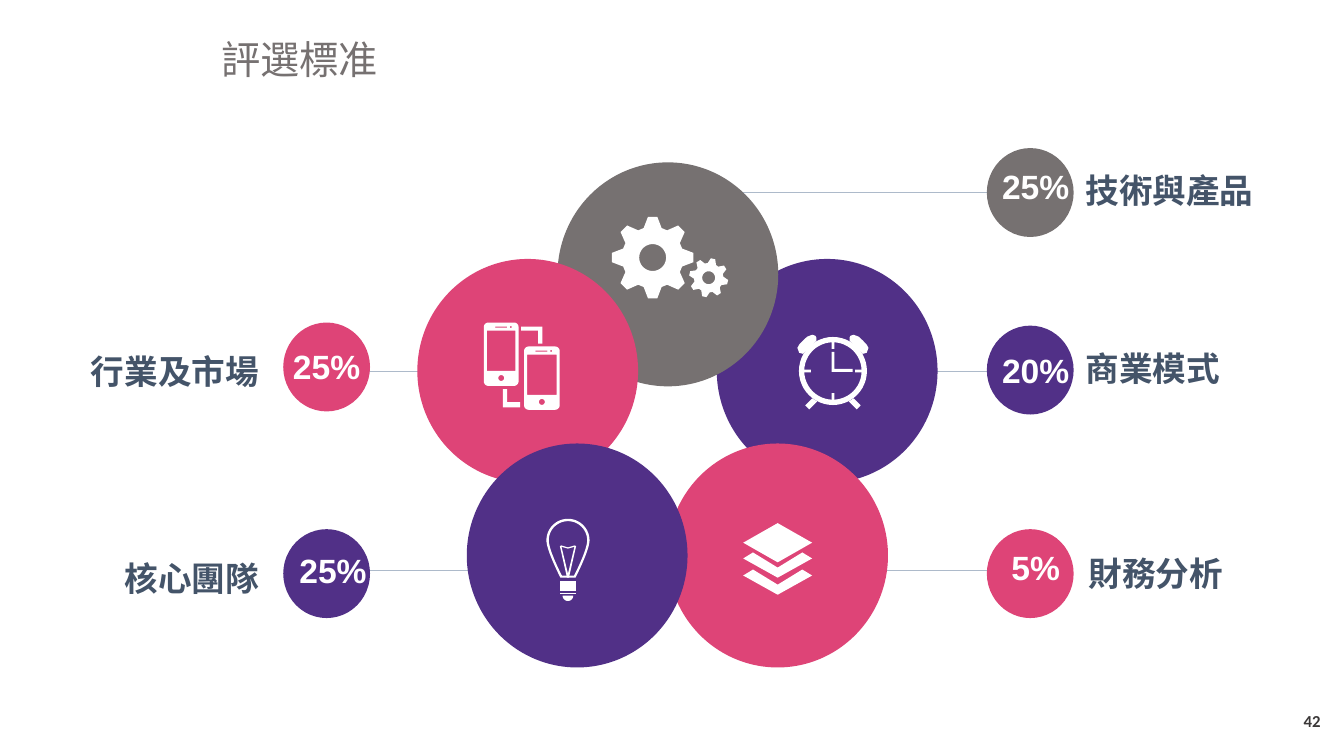
from math import cos, radians, sin

from lxml.etree import SubElement
from pptx import Presentation
from pptx.dml.color import RGBColor
from pptx.enum.shapes import MSO_CONNECTOR, MSO_SHAPE
from pptx.enum.text import MSO_ANCHOR, PP_ALIGN
from pptx.oxml.ns import qn
from pptx.util import Pt

PURPLE = RGBColor(0x51, 0x30, 0x87)
PINK = RGBColor(0xDE, 0x44, 0x77)
GREY = RGBColor(0x76, 0x71, 0x71)
SLATE = RGBColor(0x44, 0x54, 0x69)
RULE = RGBColor(0xAD, 0xBA, 0xCA)
DARK = RGBColor(0x3B, 0x38, 0x38)
WHITE = RGBColor(0xFF, 0xFF, 0xFF)
LEFT, CENTER, RIGHT = PP_ALIGN.LEFT, PP_ALIGN.CENTER, PP_ALIGN.RIGHT
CJK = "Noto Sans CJK JP"

BIG_W, BIG_H = 157.7, 160
BADGE_W, BADGE_H = 62, 63.5
LABEL_W, LABEL_H = 128, 29
BADGE_X = {"left": 202.3, "right": 704.9}

# left, top, colour, from back to front
BIG_CIRCLES = [
    (512, 185, PURPLE),
    (398.2, 116, GREY),
    (298.1, 185, PINK),
    (476.6, 316.8, PINK),
    (333.4, 316.8, PURPLE),
]
# label, share, side, colour, badge top, share box (left, top, width),
# label (left, top), rule (from x, to x, y)
CRITERIA = [
    ("行業及市場", "25%", "left", PINK, 230.4,
     (202.3, 245.5, 62), (56.9, 250.6), (220.3, 308.9, 265)),
    ("核心團隊", "25%", "left", PURPLE, 378,
     (210.2, 391, 55.4), (56.9, 398.2), (220.3, 339.1, 407.5)),
    ("技術與產品", "25%", "right", GREY, 105.8,
     (712.1, 116.6, 55.4), (775.4, 121), (525.6, 736.6, 137.5)),
    ("商業模式", "20%", "right", PURPLE, 232.6,
     (712.1, 248.4, 55.4), (775.4, 248.4), (661, 748.8, 265)),
    ("財務分析", "5%", "right", PINK, 378,
     (712.1, 388.8, 55.4), (777.6, 394.6), (625, 748.8, 407.5)),
]


def arc(x, y, r, start=0, end=360, steps=48):
    return [(x + r * cos(radians(a)), y + r * sin(radians(a)))
            for a in (start + (end - start) * i / steps for i in range(steps + 1))]


def rect(x1, y1, x2, y2):
    return [(x1, y1), (x2, y1), (x2, y2), (x1, y2)]


def mirror(points):
    return [(-x, y) for x, y in points]


def gear(tip, root, hole, turn):
    """Contours of an eight-toothed wheel with a round hole."""
    teeth = [(r * cos(radians(a)), r * sin(radians(a)))
             for k in range(8)
             for r, a in ((root, 45 * k + turn - 17), (tip, 45 * k + turn - 6.5),
                          (tip, 45 * k + turn + 6.5), (root, 45 * k + turn + 17))]
    return [teeth, arc(0, 0, hole)]


def phone(w, h):
    """Contours of a rounded body with screen, speaker, camera and button cut out."""
    r = 3.2
    corners = ((w - r, h - r, 0), (r, h - r, 90), (r, r, 180), (w - r, r, 270))
    body = [pt for x, y, a in corners for pt in arc(x, y, r, a, a + 90, 8)]
    return [body, rect(2.2, 5.8, w - 2.2, 34.6), rect(8, 2.9, 16.6, 3.6),
            arc(19.3, 3.2, 0.7), arc(w / 2, 39.6, 2.1)]


def bulb_glass(r, neck, bottom):
    """Half circle on top, curved down to a narrow neck."""
    side = []
    for i in range(1, 17):
        t = i / 16
        u = 1 - t
        side.append((u**3 * r + 3 * u * u * t * r + (3 * u * t * t + t**3) * neck,
                     3 * u * u * t * 7.2 + (3 * u * t * t + t**3) * bottom))
    return arc(0, 0, r, 180, 360) + side + mirror(side[::-1])


FILAMENT = [[(5.8, 4.1), (4.7, 3.6), (0, 5), (-4.7, 3.6), (-5.8, 4.1),
             (-0.7, 26.6), (0.7, 26.6)],
            [(0, 23.8), (-4.6, 4.6), (0, 5.9), (4.6, 4.6)]]
EAR = [(21.3, -12.2), (24.1, -13), (25.4, -16.5), (24, -19), (21.3, -21.8),
       (18.4, -24.5), (14.8, -25.9), (12.6, -25.2), (11.9, -24), (11.9, -21.6)]
LEG = [(14.8, 19.5), (19.8, 24.5), (17, 27.4), (11.3, 21.7)]
HANDS = [(-1, -13.7), (1, -13.7), (1, -1.4), (14, -1.4), (14, 0.7), (-1, 0.7)]
TICKS = [rect(-1, -20.8, 1, -15.8), rect(-1, 15.8, 1, 20.8),
         rect(-20.8, -1, -15.8, 1), rect(15.8, -1, 20.8, 1)]
CHEVRON = [(0, 10.8), (-17.6, 0), (-24.6, 4.3), (0, 18), (24.6, 4.3), (17.6, 0)]
DIAMOND = [(24.6, 0), (0, -14), (-24.6, 0), (0, 14)]
CABLE_TOP = [(0, 0), (15.2, 0), (15.2, 12.2), (12.3, 12.2), (12.3, 2.9), (0, 2.9)]
CABLE_BOTTOM = [(0, 0), (2.9, 0), (2.9, 9.4), (12.2, 9.4), (12.2, 13), (0, 13)]

# reference point and the shapes drawn around it, each a list of contours
ICONS = [
    ((466.2, 184), [gear(29.3, 22, 9.6, 0)]),
    ((506.2, 198.4), [gear(14, 10.5, 4.6, 13)]),
    ((345.6, 230.4), [phone(24.8, 45.2)]),
    ((374.4, 247.5), [phone(25.4, 45.2)]),
    ((372.2, 233.3), [[CABLE_TOP]]),
    ((359.3, 277.9), [[CABLE_BOTTOM]]),
    ((405.7, 386), [[bulb_glass(15.4, 5.4, 26.6), bulb_glass(13.7, 4.3, 25.2)],
                    FILAMENT,
                    [rect(-5.6, 28.7, 5.6, 35.9)],
                    [rect(-5.4, 37.3, 5.4, 38.3)],
                    [arc(0, 39.5, 3.8, 0, 180)[::4]]]),
    ((595, 265), [[arc(0, 0, 24.3), arc(0, 0, 20.5)], [EAR], [mirror(EAR)],
                  [LEG], [mirror(LEG)], [HANDS], TICKS]),
    ((555.5, 387.7), [[DIAMOND]]),
    ((555.5, 394.6), [[CHEVRON]]),
    ((555.5, 406.8), [[CHEVRON]]),
]


def paint(sp, color):
    sp.shadow.inherit = False
    sp.fill.solid()
    sp.fill.fore_color.rgb = color
    sp.line.fill.background()


def add_circle(x, y, w, h, color):
    paint(s.shapes.add_shape(MSO_SHAPE.OVAL, Pt(x), Pt(y), Pt(w), Pt(h)), color)


def add_rule(x1, x2, y):
    sp = s.shapes.add_connector(MSO_CONNECTOR.STRAIGHT, Pt(x1), Pt(y), Pt(x2), Pt(y))
    sp.line.color.rgb = RULE
    sp.line.width = Pt(0.5)
    SubElement(sp._element.spPr, qn("a:effectLst"))


def add_outline(origin, contours):
    ox, oy = origin
    placed = [[(Pt(ox + x), Pt(oy + y)) for x, y in c] for c in contours]
    fb = s.shapes.build_freeform(*placed[0][0])
    fb.add_line_segments(placed[0][1:], close=True)
    for c in placed[1:]:
        fb.move_to(*c[0])
        fb.add_line_segments(c[1:], close=True)
    paint(fb.convert_to_shape(), WHITE)


def add_text(text, box, size, color, align, font="Arial", bold=True,
             margins=(0, 0), anchor=MSO_ANCHOR.TOP, wrap=True):
    sp = s.shapes.add_textbox(*(Pt(v) for v in box))
    tf = sp.text_frame
    tf.word_wrap = wrap
    tf.vertical_anchor = anchor
    tf.margin_left = tf.margin_right = Pt(margins[0])
    tf.margin_top = tf.margin_bottom = Pt(margins[1])
    p = tf.paragraphs[0]
    p.alignment = align
    r = p.add_run()
    r.text = text
    r.font.size, r.font.bold, r.font.name = Pt(size), bold, font
    r.font.color.rgb = color
    SubElement(r._r.get_or_add_rPr(), qn("a:ea")).set("typeface", CJK)


prs = Presentation()
prs.slide_width, prs.slide_height = Pt(960), Pt(540)
s = prs.slides.add_slide(prs.slide_layouts[6])

for *_, rule in CRITERIA:
    add_rule(*rule)
for x, y, color in BIG_CIRCLES:
    add_circle(x, y, BIG_W, BIG_H, color)
for origin, parts in ICONS:
    for contours in parts:
        add_outline(origin, contours)
for label, share, side, color, top, (x, y, w), label_at, _ in CRITERIA:
    add_circle(BADGE_X[side], top, BADGE_W, BADGE_H, color)
    add_text(share, (x, y, w, 32.4), 24, WHITE, CENTER, margins=(3.6, 1.8))
    add_text(label, (*label_at, LABEL_W, LABEL_H), 24, SLATE,
             RIGHT if side == "left" else LEFT)
add_text("評選標准", (151.2, 21.6, 127.4, 41), 28, GREY, LEFT, CJK, False,
         (7.2, 3.6), wrap=False)
add_text("42", (734.4, 500.4, 216, 28.8), 12, DARK, RIGHT, "Calibri",
         margins=(7.2, 3.6), anchor=MSO_ANCHOR.MIDDLE)

prs.save("out.pptx")
